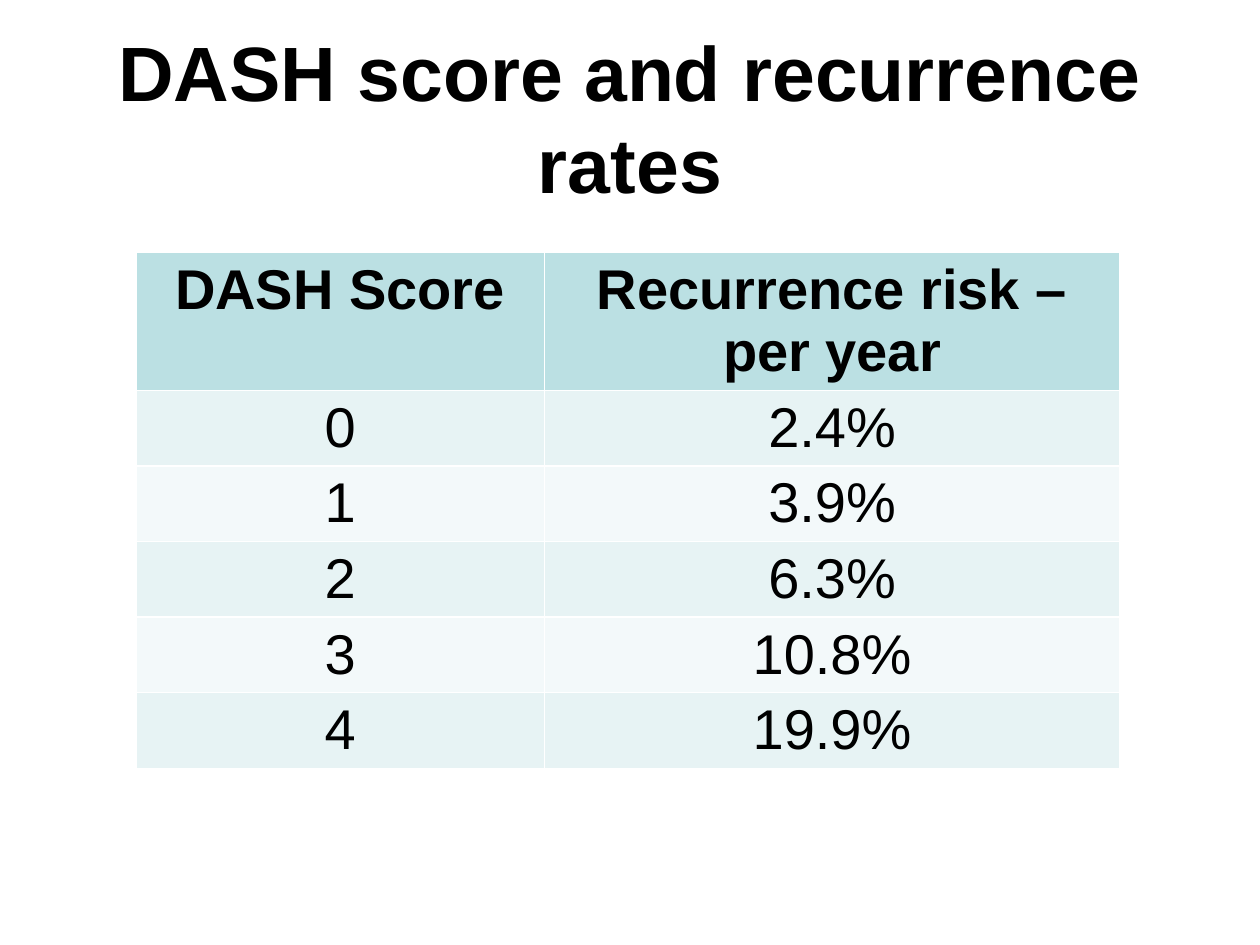
"""Build a slide with a table of DASH scores and yearly recurrence risk."""
from pptx import Presentation
from pptx.dml.color import RGBColor
from pptx.enum.text import MSO_ANCHOR, MSO_AUTO_SIZE, PP_ALIGN
from pptx.util import Inches, Pt

BLACK = RGBColor(0x00, 0x00, 0x00)
HEADER_FILL = RGBColor(0xBB, 0xE0, 0xE3)
BAND_FILLS = [RGBColor(0xF3, 0xF9, 0xFA), RGBColor(0xE7, 0xF3, 0xF4)]
COLUMN_WIDTHS = [3.24, 4.57]
HEADER_HEIGHT, ROW_HEIGHT = 1.08, 0.6
ROWS = [
    ("DASH Score", "Recurrence risk – per year"),
    ("0", "2.4%"),
    ("1", "3.9%"),
    ("2", "6.3%"),
    ("3", "10.8%"),
    ("4", "19.9%"),
]


def write(text_frame, text, size, bold):
    text_frame.text = text
    paragraph = text_frame.paragraphs[0]
    paragraph.alignment = PP_ALIGN.CENTER
    font = paragraph.runs[0].font
    font.name, font.size, font.bold = "Arial", Pt(size), bold
    font.color.rgb = BLACK


presentation = Presentation()
presentation.slide_width, presentation.slide_height = Inches(10), Inches(7.5)
slide = presentation.slides.add_slide(presentation.slide_layouts[5])

title = slide.shapes.title
title.left, title.top = Inches(0.5), Inches(0.3)
title.width, title.height = Inches(9), Inches(1.25)
write(title.text_frame, "DASH score and recurrence rates", 44, True)
title.text_frame.vertical_anchor = MSO_ANCHOR.MIDDLE
title.text_frame.auto_size = MSO_AUTO_SIZE.NONE

table_height = HEADER_HEIGHT + ROW_HEIGHT * (len(ROWS) - 1)
table = slide.shapes.add_table(
    len(ROWS), len(COLUMN_WIDTHS),
    Inches(1.08), Inches(2), Inches(sum(COLUMN_WIDTHS)), Inches(table_height),
).table
for column, width in zip(table.columns, COLUMN_WIDTHS):
    column.width = Inches(width)

for row_index, values in enumerate(ROWS):
    is_header = row_index == 0
    row = table.rows[row_index]
    row.height = Inches(HEADER_HEIGHT if is_header else ROW_HEIGHT)
    for cell, value in zip(row.cells, values):
        cell.fill.solid()
        cell.fill.fore_color.rgb = HEADER_FILL if is_header else BAND_FILLS[row_index % 2]
        write(cell.text_frame, value, 32, is_header)

presentation.save("out.pptx")
